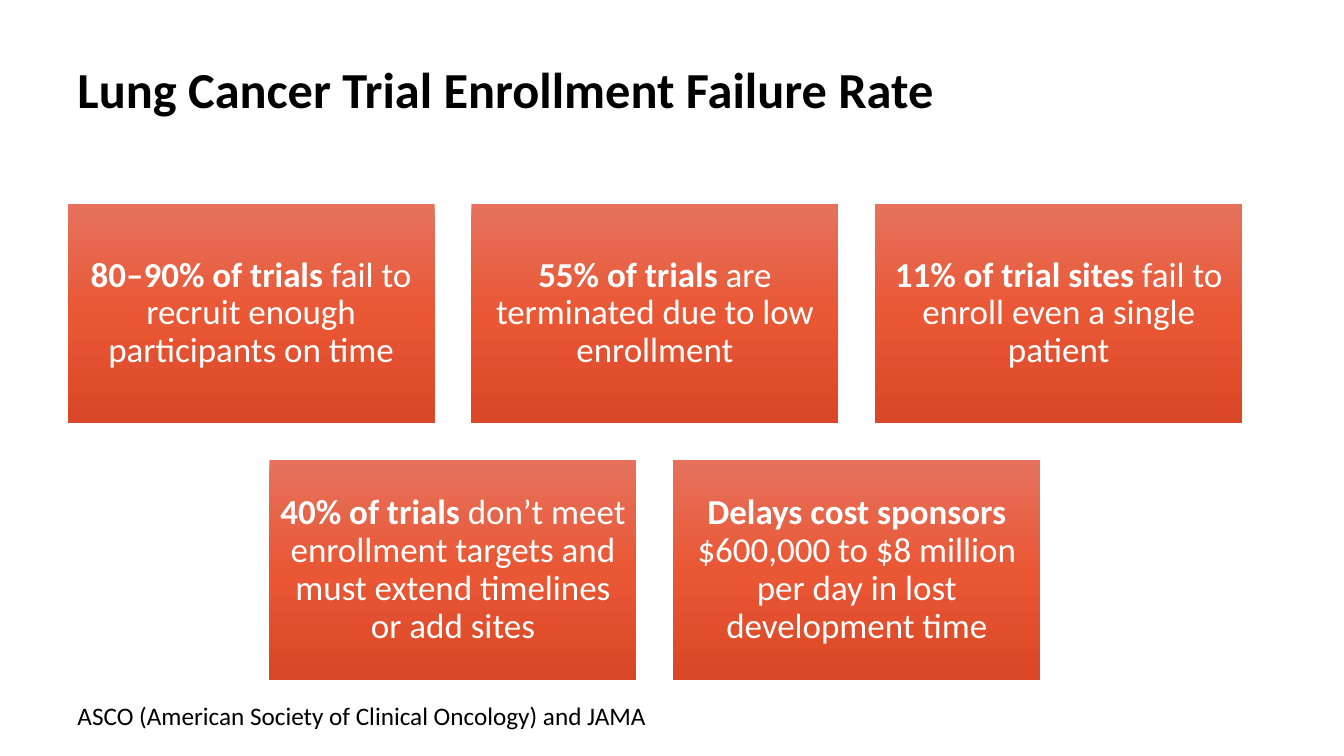
"""Build the slide on lung cancer trial enrollment failure rates."""
import copy

import pptx
import pptx.dml.color
import pptx.enum.shapes
import pptx.enum.text
import pptx.oxml.ns
import pptx.util

Inches = pptx.util.Inches
Pt = pptx.util.Pt
RGBColor = pptx.dml.color.RGBColor
Anchor = pptx.enum.text.MSO_ANCHOR
Align = pptx.enum.text.PP_ALIGN

THEME = {
    "font": "Calibri",
    "ink": RGBColor.from_string("000000"),
    "card_text": RGBColor.from_string("FFFFFF"),
    "gradient": [(0, "E6725D"), (0.5, "E95735"), (1, "D94726")],
    "title_size": Pt(36),
    "card_size": Pt(25),
    "source_size": Pt(18),
}

CARD_ROWS = [
    [
        ("80–90% of trials", " fail to recruit enough participants on time"),
        ("55% of trials", " are terminated due to low enrollment"),
        ("11% of trial sites", " fail to enroll even a single patient"),
    ],
    [
        ("40% of trials", " don’t meet enrollment targets and must extend timelines or add sites"),
        ("Delays cost sponsors", " $600,000 to $8 million per day in lost development time"),
    ],
]
LEFT, TOP, CONTENT_WIDTH = 0.67, 2.02, 11.65
CARD_WIDTH, CARD_HEIGHT, GAP = 3.64, 2.18, 0.365


def apply_format(target, values):
    for name, value in values.items():
        setattr(target, name, value)


def write_paragraph(frame, runs, size, color, layout):
    paragraph = frame.paragraphs[0]
    apply_format(paragraph, layout)
    for text, bold in runs:
        run = paragraph.add_run()
        run.text = text
        apply_format(run.font, {"name": THEME["font"], "size": size, "bold": bold})
        run.font.color.rgb = color


presentation = pptx.Presentation()
apply_format(presentation, {"slide_width": Inches(13.33), "slide_height": Inches(7.5)})
slide = presentation.slides.add_slide(presentation.slide_layouts[6])

title = slide.shapes.add_textbox(Inches(LEFT), Inches(0.6), Inches(CONTENT_WIDTH), Inches(1.24))
title.text_frame.word_wrap = True
write_paragraph(
    title.text_frame,
    [("Lung Cancer Trial Enrollment Failure Rate", True)],
    THEME["title_size"],
    THEME["ink"],
    {"line_spacing": 0.9},
)

card_frame_format = {
    "word_wrap": True,
    "vertical_anchor": Anchor.MIDDLE,
    "margin_left": Inches(0.1),
    "margin_right": Inches(0.1),
    "margin_top": Inches(0.1),
    "margin_bottom": Inches(0.1),
}
for row_index, row in enumerate(CARD_ROWS):
    row_width = len(row) * CARD_WIDTH + (len(row) - 1) * GAP
    row_left = LEFT + (CONTENT_WIDTH - row_width) / 2
    card_top = TOP + row_index * (CARD_HEIGHT + GAP)
    for column, (finding, detail) in enumerate(row):
        card = slide.shapes.add_shape(
            pptx.enum.shapes.MSO_SHAPE.RECTANGLE,
            Inches(row_left + column * (CARD_WIDTH + GAP)),
            Inches(card_top),
            Inches(CARD_WIDTH),
            Inches(CARD_HEIGHT),
        )
        card.shadow.inherit = False
        card.line.fill.background()
        card.fill.gradient()
        card.fill.gradient_angle = 270
        stop_list = next(card.element.iter(pptx.oxml.ns.qn("a:gsLst")))
        stop_list.append(copy.deepcopy(stop_list[0]))
        for stop, (position, color) in zip(card.fill.gradient_stops, THEME["gradient"]):
            stop.position = position
            stop.color.rgb = RGBColor.from_string(color)
        apply_format(card.text_frame, card_frame_format)
        write_paragraph(
            card.text_frame,
            [(finding, True), (detail, False)],
            THEME["card_size"],
            THEME["card_text"],
            {"alignment": Align.CENTER, "line_spacing": 0.9},
        )

source = slide.shapes.add_textbox(Inches(LEFT), Inches(6.9), Inches(9.01), Inches(0.4))
source.text_frame.word_wrap = True
write_paragraph(
    source.text_frame,
    [("ASCO (American Society of Clinical Oncology) and JAMA", False)],
    THEME["source_size"],
    THEME["ink"],
    {},
)

presentation.save("out.pptx")
